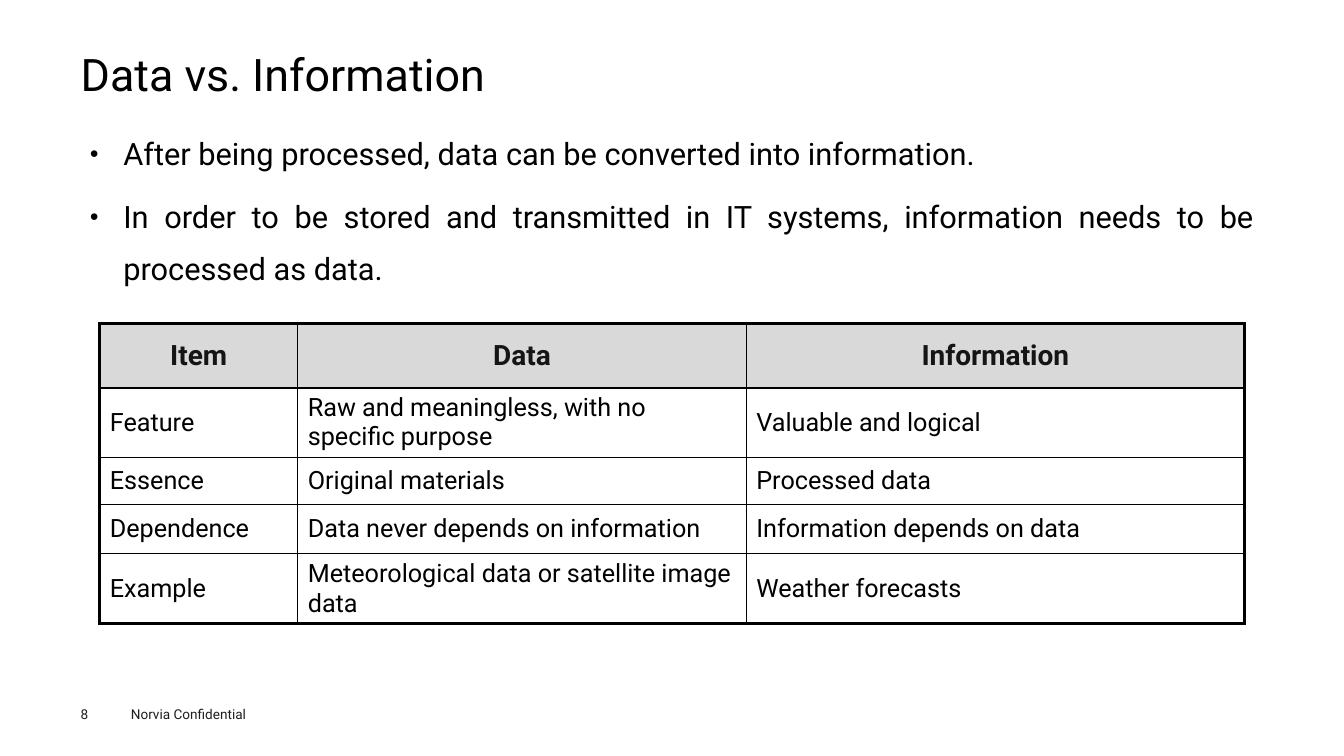
from dataclasses import dataclass

from lxml.etree import SubElement
from pptx import Presentation
from pptx.dml.color import RGBColor as Rgb
from pptx.enum.text import MSO_ANCHOR as Anchor, MSO_AUTO_SIZE as Fit, PP_ALIGN as Align
from pptx.oxml.ns import qn
from pptx.util import Pt


@dataclass(frozen=True)
class Theme:
    """Font, colours and type sizes of the slide."""
    font: str = "Roboto"
    black: str = "000000"
    head: str = "151515"
    foot: str = "1D1D1B"
    gray: str = "D9D9D9"
    title: float = 32
    body: float = 22
    top: float = 20
    cell: float = 18
    small: float = 9.7
    thick: float = 2.25
    thin: float = 1


THEME = Theme()
POINTS = [
    "After being processed, data can be converted into information.",
    "In order to be stored and transmitted in IT systems, information needs to be processed as data.",
]
ROWS = [
    ["Item", "Data", "Information"],
    ["Feature", "Raw and meaningless, with no specific purpose", "Valuable and logical"],
    ["Essence", "Original materials", "Processed data"],
    ["Dependence", "Data never depends on information", "Information depends on data"],
    ["Example", "Meteorological data or satellite image data", "Weather forecasts"],
]
WIDTHS = [141.4, 320.4, 356]
HEIGHTS = [46, 49.5, 34, 35, 50]


def style(para, size, color, bold=False):
    """Format every run of a paragraph."""
    for run in para.runs:
        font = run.font
        font.name, font.size, font.bold = THEME.font, Pt(size), bold
        font.color.rgb = Rgb.from_string(color)


def place(shape, left, top, width, height):
    """Move and size a shape."""
    shape.left, shape.top = Pt(left), Pt(top)
    shape.width, shape.height = Pt(width), Pt(height)


def inset(frame, side, edge):
    """Set the margins of a text frame."""
    frame.margin_left = frame.margin_right = Pt(side)
    frame.margin_top = frame.margin_bottom = Pt(edge)


def add_title(slide, text):
    """Fill the title placeholder."""
    shape = slide.shapes.title
    place(shape, 57.6, 35.3, 844.6, 38.9)
    frame = shape.text_frame
    frame.text = text
    frame.auto_size, frame.vertical_anchor = Fit.NONE, Anchor.MIDDLE
    inset(frame, 0, 0)
    para = frame.paragraphs[0]
    para.alignment, para.line_spacing = Align.LEFT, 0.9
    style(para, THEME.title, THEME.black)


def add_list(slide, items):
    """Fill the body placeholder with bullets."""
    shape = slide.placeholders[1]
    place(shape, 57.6, 82.8, 844.6, 383.8)
    frame = shape.text_frame
    frame.text = "\n".join(items)
    frame.auto_size, frame.vertical_anchor = Fit.NONE, Anchor.TOP
    inset(frame, 6.5, 3)
    for index, para in enumerate(frame.paragraphs):
        props = para._p.get_or_add_pPr()
        props.set("marL", str(Pt(24)))
        props.set("indent", str(Pt(-24)))
        SubElement(props, qn("a:buSzPct"), val="50000")
        SubElement(props, qn("a:buChar"), char="●")
        para.alignment, para.line_spacing = Align.JUSTIFY, 1.4
        para.space_before = Pt(7.9 if index else 0)
        style(para, THEME.body, THEME.black)


def add_edge(cell, side, width):
    """Draw one border of a cell."""
    props = cell._tc.get_or_add_tcPr()
    line = SubElement(props, qn(f"a:ln{side}"), w=str(Pt(width)))
    fill = SubElement(line, qn("a:solidFill"))
    SubElement(fill, qn("a:srgbClr"), val=THEME.black)


def fill_cell(cell, text, head):
    """Write and colour one cell."""
    cell.text = text
    cell.vertical_anchor = Anchor.MIDDLE
    para = cell.text_frame.paragraphs[0]
    if head:
        cell.fill.solid()
        cell.fill.fore_color.rgb = Rgb.from_string(THEME.gray)
        para.alignment = Align.CENTER
        style(para, THEME.top, THEME.head, True)
    else:
        cell.fill.background()
        style(para, THEME.cell, THEME.black)


def add_grid(slide, rows):
    """Add the table with a thick frame and thin inner lines."""
    shape = slide.shapes.add_table(
        len(rows), len(WIDTHS), Pt(71.3), Pt(231.1), Pt(sum(WIDTHS)), Pt(sum(HEIGHTS)))
    table = shape.table
    table.first_row = table.horz_banding = False
    for column, width in zip(table.columns, WIDTHS):
        column.width = Pt(width)
    for row, height in zip(table.rows, HEIGHTS):
        row.height = Pt(height)
    for y, texts in enumerate(rows):
        for x, text in enumerate(texts):
            cell = table.cell(y, x)
            outer = {"L": x == 0, "R": x == len(texts) - 1,
                     "T": y == 0, "B": y == len(rows) - 1}
            for side, edge in outer.items():
                add_edge(cell, side, THEME.thick if edge else THEME.thin)
            fill_cell(cell, text, y == 0)


def add_note(slide, text, box, side, edge):
    """Add a small footer text."""
    frame = slide.shapes.add_textbox(*map(Pt, box)).text_frame
    frame.text, frame.word_wrap = text, True
    inset(frame, side, edge)
    style(frame.paragraphs[0], THEME.small, THEME.foot)


def main():
    """Build and save the slide."""
    deck = Presentation()
    deck.slide_width, deck.slide_height = Pt(960), Pt(540)
    slide = deck.slides.add_slide(deck.slide_layouts[1])
    add_title(slide, "Data vs. Information")
    add_list(slide, POINTS)
    add_grid(slide, ROWS)
    add_note(slide, "Norvia Confidential", (86.4, 500.4, 115.2, 19.4), 7.2, 3.6)
    add_note(slide, "8", (57.6, 504, 39.6, 11.5), 0, 0)
    deck.save("out.pptx")


if __name__ == "__main__":
    main()
